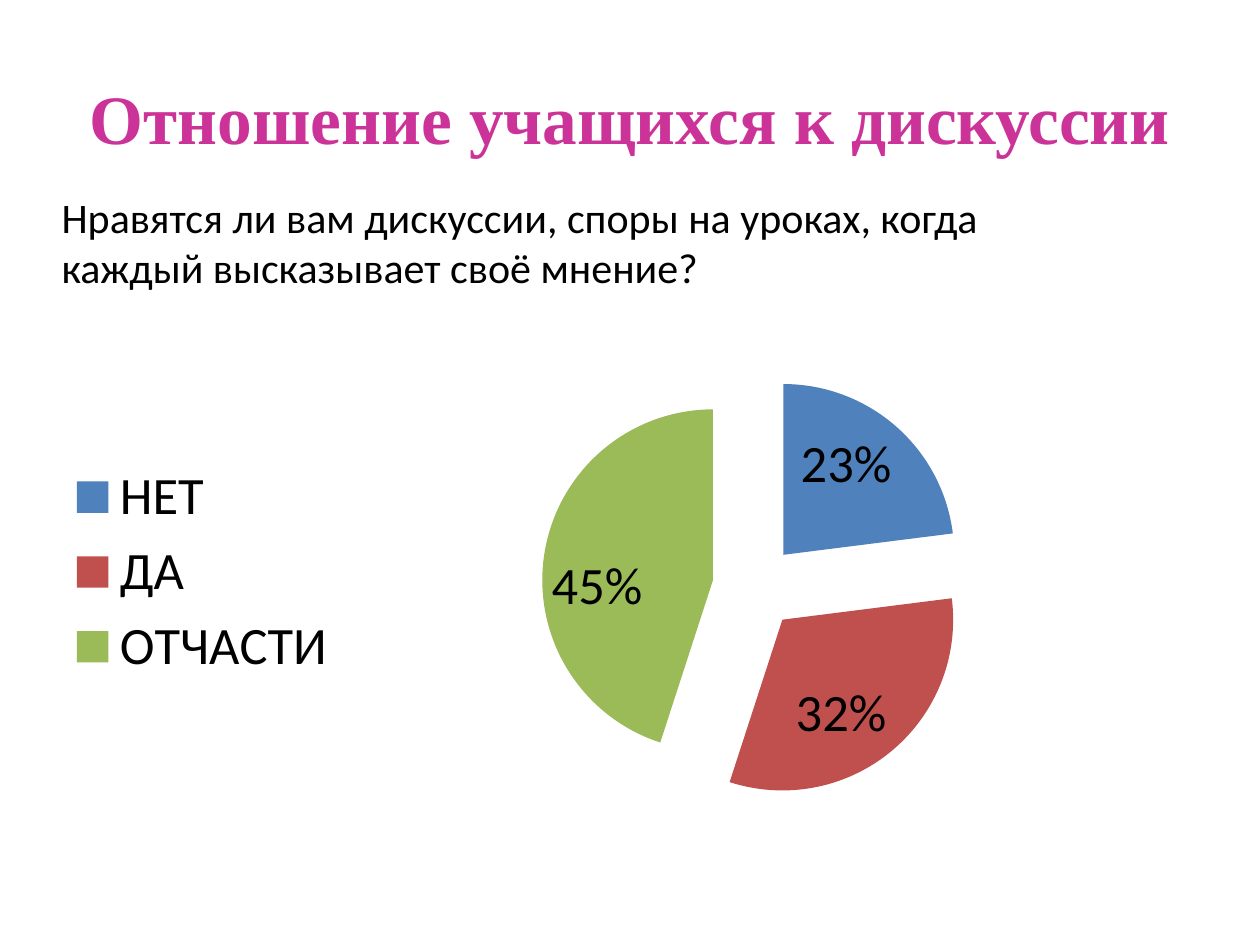
import pptx
import pptx.util
import pptx.dml.color
import pptx.enum.text
import pptx.enum.chart
import pptx.chart.data
from lxml import etree
from pptx.util import Inches

colors = {
    "title": "CC3399",
    "text": "000000",
    "no": "4F81BD",
    "yes": "C0504D",
    "partly": "9BBB59",
}


def style(font, size, color, face="Calibri"):
    font.size = pptx.util.Pt(size)
    font.name = face
    font.color.rgb = pptx.dml.color.RGBColor.from_string(colors[color])


deck = pptx.Presentation()
deck.slide_width = Inches(10)
deck.slide_height = Inches(7.5)
slide = deck.slides.add_slide(deck.slide_layouts[6])

title = slide.shapes.add_textbox(Inches(0.5), Inches(0.3), Inches(9), Inches(1.25))
frame = title.text_frame
frame.word_wrap = True
frame.vertical_anchor = pptx.enum.text.MSO_ANCHOR.MIDDLE
para = frame.paragraphs[0]
para.alignment = pptx.enum.text.PP_ALIGN.CENTER
run = para.add_run()
run.text = "Отношение учащихся к дискуссии"
style(run.font, 39.6, "title", "Times New Roman")
run.font.bold = True

data = pptx.chart.data.CategoryChartData(number_format="0%")
data.categories = ["НЕТ", "ДА", "ОТЧАСТИ"]
data.add_series("Series 1", [0.23, 0.32, 0.45])
chart = slide.shapes.add_chart(
    pptx.enum.chart.XL_CHART_TYPE.PIE,
    Inches(0.39), Inches(2.57), Inches(9.42), Inches(3.94), data,
).chart
chart.has_title = False
style(chart.font, 18, "text")
chart.has_legend = True
chart.legend.position = pptx.enum.chart.XL_LEGEND_POSITION.LEFT
chart.legend.include_in_layout = False
style(chart.legend.font, 30, "text")

pie = chart.plots[0]
pie.vary_by_categories = True
series = pie.series[0]
for index, name in enumerate(["no", "yes", "partly"]):
    fill = series.points[index].format.fill
    fill.solid()
    fill.fore_color.rgb = pptx.dml.color.RGBColor.from_string(colors[name])

labels = series.data_labels
labels.show_value = True
labels.show_percentage = False
labels.number_format = "0%"
labels.number_format_is_linked = False
labels.position = pptx.enum.chart.XL_LABEL_POSITION.INSIDE_END
style(labels.font, 30, "text")

space = chart._chartSpace
burst = etree.Element(pptx.oxml.ns.qn("c:explosion"), val="25")
space.xpath(".//c:ser/c:tx")[0].addnext(burst)

area = space.xpath(".//c:plotArea")[0]
for old in area.xpath("c:layout"):
    area.remove(old)
layout = etree.Element(pptx.oxml.ns.qn("c:layout"))
manual = etree.SubElement(layout, pptx.oxml.ns.qn("c:manualLayout"))
for tag, value in [
    ("layoutTarget", "inner"), ("xMode", "edge"), ("yMode", "edge"),
    ("x", "0.255"), ("y", "0.1"), ("w", "0.68"), ("h", "0.86"),
]:
    etree.SubElement(manual, pptx.oxml.ns.qn("c:" + tag), val=value)
area.insert(0, layout)

query = slide.shapes.add_textbox(Inches(0.39), Inches(1.47), Inches(8.15), Inches(0.91))
frame = query.text_frame
frame.word_wrap = True
frame.auto_size = pptx.enum.text.MSO_AUTO_SIZE.SHAPE_TO_FIT_TEXT
run = frame.paragraphs[0].add_run()
run.text = "Нравятся ли вам дискуссии, споры на уроках, когда каждый высказывает своё мнение?"
style(run.font, 24, "text")

deck.save("out.pptx")
